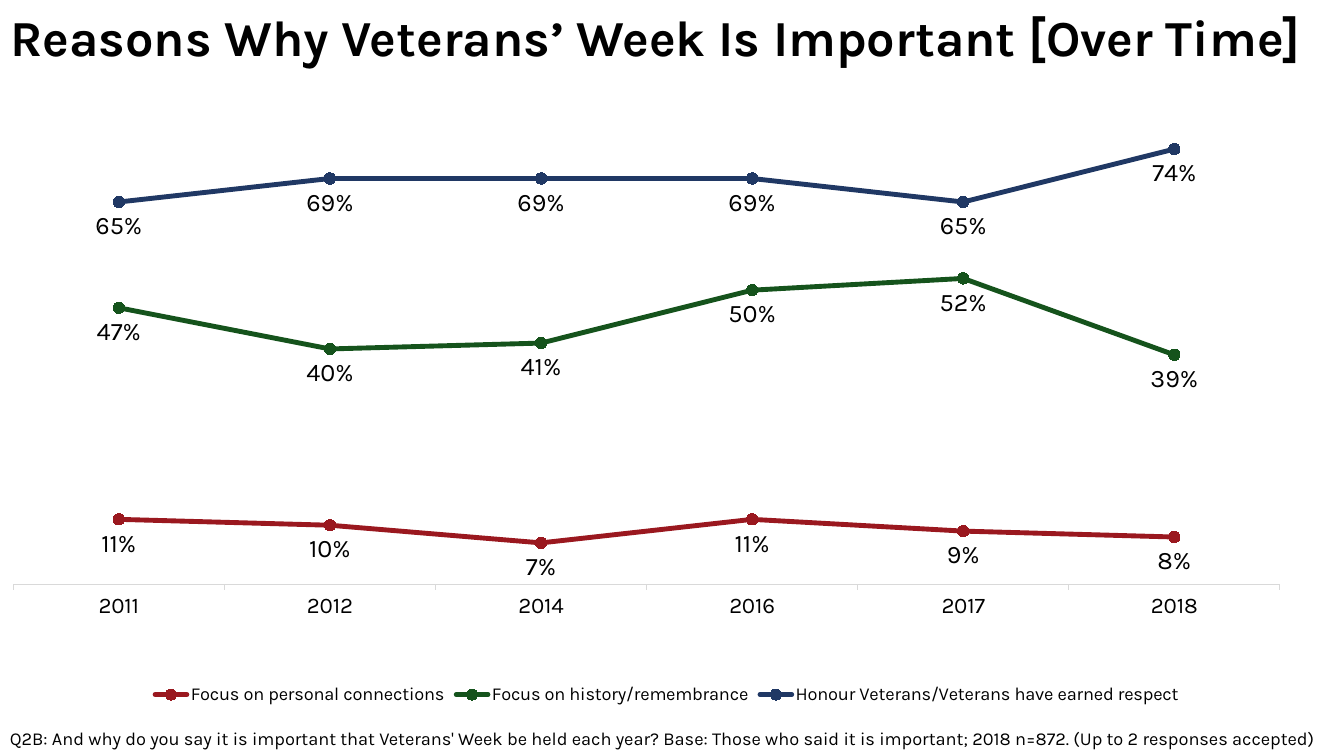
"""Build a slide with a line chart of the reasons why Veterans' Week is important."""
from lxml import etree
from pptx import Presentation
from pptx.chart.data import CategoryChartData
from pptx.dml.color import RGBColor
from pptx.enum.chart import (XL_CHART_TYPE, XL_LABEL_POSITION, XL_LEGEND_POSITION,
                             XL_MARKER_STYLE, XL_TICK_MARK)
from pptx.enum.text import MSO_ANCHOR, MSO_AUTO_SIZE, PP_ALIGN
from pptx.oxml.ns import qn
from pptx.util import Cm, Pt

LINE_MARKERS = XL_CHART_TYPE.LINE_MARKERS
BELOW = XL_LABEL_POSITION.BELOW
BOTTOM = XL_LEGEND_POSITION.BOTTOM
CIRCLE = XL_MARKER_STYLE.CIRCLE
TICK_OUTSIDE = XL_TICK_MARK.OUTSIDE
TICK_NONE = XL_TICK_MARK.NONE
MIDDLE = MSO_ANCHOR.MIDDLE
LEFT = PP_ALIGN.LEFT
NO_AUTOFIT = MSO_AUTO_SIZE.NONE
FIT_SHAPE = MSO_AUTO_SIZE.SHAPE_TO_FIT_TEXT

BLACK = RGBColor(0x00, 0x00, 0x00)
WHITE = RGBColor(0xFF, 0xFF, 0xFF)
LIGHT_GREY = RGBColor(0xD9, 0xD9, 0xD9)
RED = RGBColor(0x9A, 0x18, 0x1F)
GREEN = RGBColor(0x15, 0x53, 0x1C)
NAVY = RGBColor(0x20, 0x38, 0x64)

SLIDE_WIDTH = Cm(33.87)
SLIDE_HEIGHT = Cm(19.05)
TITLE_ONLY_LAYOUT = 5

YEARS = ("2011", "2012", "2014", "2016", "2017", "2018")
REASONS = (
    ("Focus on personal connections", RED, (0.11, 0.10, 0.07, 0.11, 0.09, 0.08)),
    ("Focus on history/remembrance", GREEN, (0.47, 0.40, 0.41, 0.50, 0.52, 0.39)),
    ("Honour Veterans/Veterans have earned respect", NAVY,
     (0.65, 0.69, 0.69, 0.69, 0.65, 0.74)),
)
PLOT_LAYOUT = (("layoutTarget", "inner"), ("xMode", "edge"), ("yMode", "edge"),
               ("x", 0.01), ("y", 0), ("w", 0.95), ("h", 0.79))


class SlideBuilder:
    """Holds the style and the current slide."""

    font_name = "Karla"
    percent_format = "0%"

    def __init__(self, slide):
        self.slide = slide

    def style_font(self, font, size, bold=False):
        font.name = self.font_name
        font.size = Pt(size)
        font.bold = bold
        font.color.rgb = BLACK

    def add_title(self, text, left, top, width, height):
        title = self.slide.shapes.title
        title.left, title.top, title.width, title.height = left, top, width, height
        title.fill.solid()
        title.fill.fore_color.rgb = WHITE
        frame = title.text_frame
        frame.text = text
        frame.vertical_anchor = MIDDLE
        frame.auto_size = NO_AUTOFIT
        paragraph = frame.paragraphs[0]
        paragraph.alignment = LEFT
        paragraph.line_spacing = 0.9
        self.style_font(paragraph.font, 36, bold=True)

    def add_note(self, text, left, top, width, height):
        frame = self.slide.shapes.add_textbox(left, top, width, height).text_frame
        frame.word_wrap = True
        frame.auto_size = FIT_SHAPE
        frame.text = text
        self.style_font(frame.paragraphs[0].font, 13)

    def add_line_chart(self, years, reasons, left, top, width, height):
        data = CategoryChartData(number_format=self.percent_format)
        data.categories = years
        for name, _, values in reasons:
            data.add_series(name, values)
        chart = self.slide.shapes.add_chart(
            LINE_MARKERS, left, top, width, height, data).chart
        self.style_font(chart.font, 10)
        chart.has_title = False
        chart.has_legend = True
        chart.legend.position = BOTTOM
        chart.legend.include_in_layout = False
        self.style_font(chart.legend.font, 13)
        self.style_axes(chart)
        self.place_plot(chart)
        plot = chart.plots[0]
        plot.vary_by_categories = False
        for series, (_, color, _) in zip(plot.series, reasons):
            self.style_series(series, color)

    def style_axes(self, chart):
        value_axis = chart.value_axis
        value_axis.visible = False
        value_axis.has_major_gridlines = False
        value_axis.minimum_scale = 0
        value_axis.maximum_scale = 0.8
        category_axis = chart.category_axis
        category_axis.major_tick_mark = TICK_OUTSIDE
        category_axis.minor_tick_mark = TICK_NONE
        category_axis.format.line.color.rgb = LIGHT_GREY
        category_axis.format.line.width = Pt(0.75)
        self.style_font(category_axis.tick_labels.font, 16)

    def place_plot(self, chart):
        plot_area = chart.element.find(".//" + qn("c:plotArea"))
        for layout in plot_area.findall(qn("c:layout")):
            plot_area.remove(layout)
        layout = etree.Element(qn("c:layout"))
        manual = etree.SubElement(layout, qn("c:manualLayout"))
        for name, value in PLOT_LAYOUT:
            etree.SubElement(manual, qn("c:" + name), val=str(value))
        plot_area.insert(0, layout)

    def style_series(self, series, color):
        series.smooth = False
        series.format.line.color.rgb = color
        series.format.line.width = Pt(3.5)
        line = series.format.line._get_or_add_ln()
        line.set("cap", "rnd")
        marker = series.marker
        marker.style = CIRCLE
        marker.size = 8
        marker.format.fill.solid()
        marker.format.fill.fore_color.rgb = color
        marker.format.line.color.rgb = color
        labels = series.data_labels
        labels.show_value = True
        labels.position = BELOW
        labels.number_format = self.percent_format
        labels.number_format_is_linked = False
        self.style_font(labels.font, 18)


def main():
    presentation = Presentation()
    presentation.slide_width = SLIDE_WIDTH
    presentation.slide_height = SLIDE_HEIGHT
    layout = presentation.slide_layouts[TITLE_ONLY_LAYOUT]
    builder = SlideBuilder(presentation.slides.add_slide(layout))
    builder.add_line_chart(YEARS, REASONS, Cm(0), Cm(2.87), Cm(33.6), Cm(15))
    builder.add_title("Reasons Why Veterans’ Week Is Important [Over Time]",
                      Cm(0), Cm(0), SLIDE_WIDTH, Cm(2.03))
    builder.add_note(
        "Q2B: And why do you say it is important that Veterans' Week be held each year? "
        "Base: Those who said it is important; 2018 n=872. (Up to 2 responses accepted)",
        Cm(0), Cm(18.19), SLIDE_WIDTH, Cm(0.81))
    presentation.save("out.pptx")


if __name__ == "__main__":
    main()
